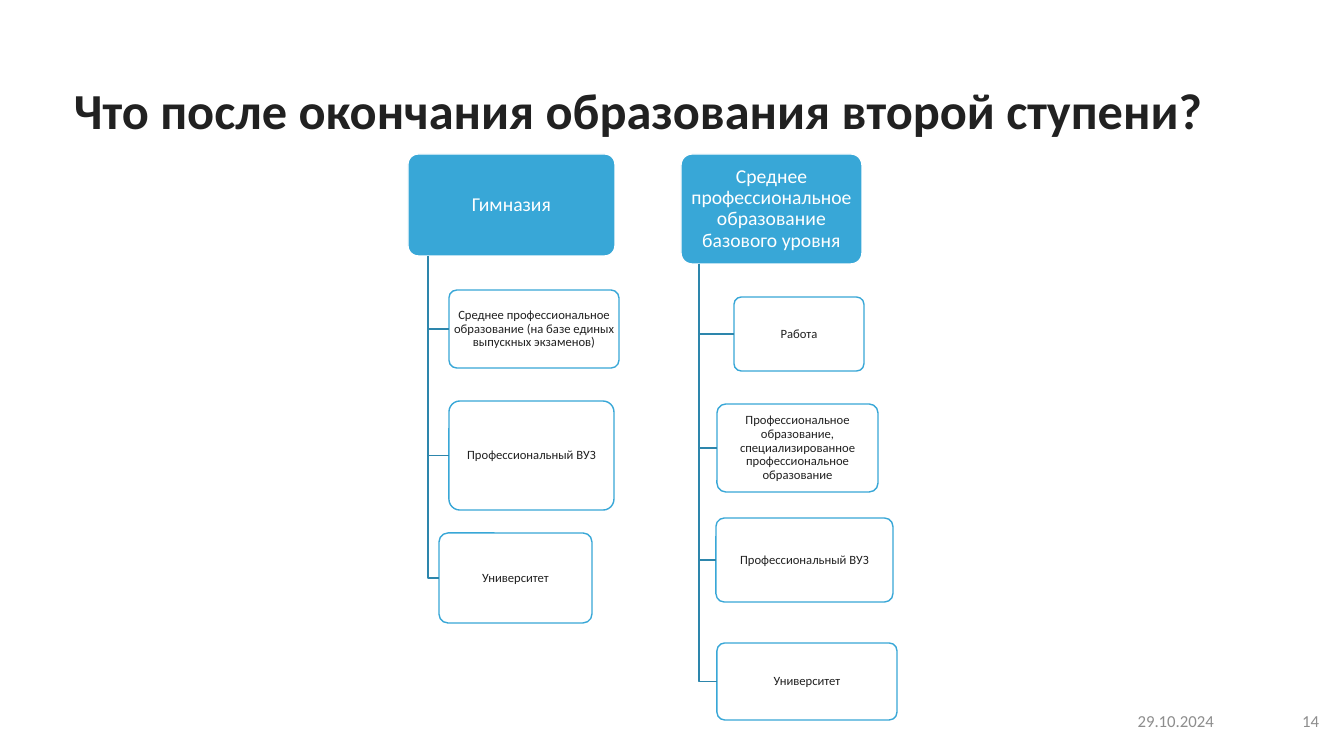
from pptx import Presentation
from pptx.dml.color import RGBColor
from pptx.enum.shapes import MSO_SHAPE as Shape
from pptx.enum.text import MSO_ANCHOR as Anchor, PP_ALIGN as Align
from pptx.util import Emu, Pt

FONT = "Calibri"
WHITE = RGBColor(0xFF, 0xFF, 0xFF)
BLUE = RGBColor(0x38, 0xA7, 0xD7)
DARK_BLUE = RGBColor(0x2D, 0x86, 0xAC)
INK = RGBColor(0x21, 0x21, 0x21)
GREY = RGBColor(0x8D, 0x8D, 0x8D)

# Each branch: heading, heading area, trunk x, then its options with their areas
BRANCHES = [
    ("Гимназия", (408, 154, 207, 102), 428, [
        ("Среднее профессиональное образование (на базе единых выпускных экзаменов)",
         (449, 290, 170, 78)),
        ("Профессиональный ВУЗ", (449, 401, 165, 109)),
        ("Университет", (439, 533, 153, 90)),
    ]),
    ("Среднее профессиональное образование базового уровня",
     (681, 154, 181, 110), 699, [
        ("Работа", (734, 297, 130, 74)),
        ("Профессиональное образование, специализированное профессиональное образование",
         (717, 404, 161, 88)),
        ("Профессиональный ВУЗ", (716, 518, 177, 84)),
        ("Университет", (717, 643, 180, 77)),
    ]),
]


def px(count):
    return Emu(round(count * 914400 / 100.8))


def write(box, text, size, color, align=Align.CENTER, bold=False, spacing=0.9):
    frame = box.text_frame
    frame.word_wrap = True
    frame.vertical_anchor = Anchor.MIDDLE
    para = frame.paragraphs[0]
    para.alignment = align
    para.line_spacing = spacing
    span = para.add_run()
    span.text = text
    span.font.name = FONT
    span.font.size = Pt(size)
    span.font.bold = bold
    span.font.color.rgb = color


def add_label(page, area, text, size, color, **style):
    box = page.shapes.add_textbox(*map(px, area))
    write(box, text, size, color, **style)


def add_card(page, area, text, size, color, fill, outline, inset):
    card = page.shapes.add_shape(Shape.ROUNDED_RECTANGLE, *map(px, area))
    card.adjustments[0] = 0.1
    card.shadow.inherit = False
    card.fill.solid()
    card.fill.fore_color.rgb = fill
    card.line.color.rgb = outline
    card.line.width = Pt(1)
    frame = card.text_frame
    frame.margin_left = frame.margin_right = px(inset)
    frame.margin_top = frame.margin_bottom = px(inset - 1)
    write(card, text, size, color)
    return card


def add_elbow(page, start_x, start_y, end_x, end_y):
    outline = page.shapes.build_freeform(start_x, start_y)
    outline.add_line_segments([(start_x, end_y), (end_x, end_y)], close=False)
    elbow = outline.convert_to_shape()
    elbow.shadow.inherit = False
    elbow.fill.background()
    elbow.line.color.rgb = DARK_BLUE
    elbow.line.width = Pt(1)


def add_branch(page, heading, area, trunk, options):
    top = add_card(page, area, heading, 14, WHITE, BLUE, WHITE, 4)
    for text, place in options:
        card = add_card(page, place, text, 9, INK, WHITE, BLUE, 2)
        add_elbow(page, px(trunk), top.top + top.height,
                  card.left, card.top + card.height // 2)


def main():
    deck = Presentation()
    deck.slide_width, deck.slide_height = px(1344), px(756)
    page = deck.slides.add_slide(deck.slide_layouts[6])

    # Title
    add_label(page, (25, 40, 1227, 146),
              "Что после окончания образования второй ступени?", 36, INK, bold=True)

    # Two trees of options
    for branch in BRANCHES:
        add_branch(page, *branch)

    # Footer
    for text, area in [("14", (1235, 701, 94, 40)),
                       ("29.10.2024", (1103, 701, 121, 40))]:
        add_label(page, area, text, 12, GREY, align=Align.RIGHT, spacing=1.0)

    deck.save("out.pptx")


if __name__ == "__main__":
    main()
